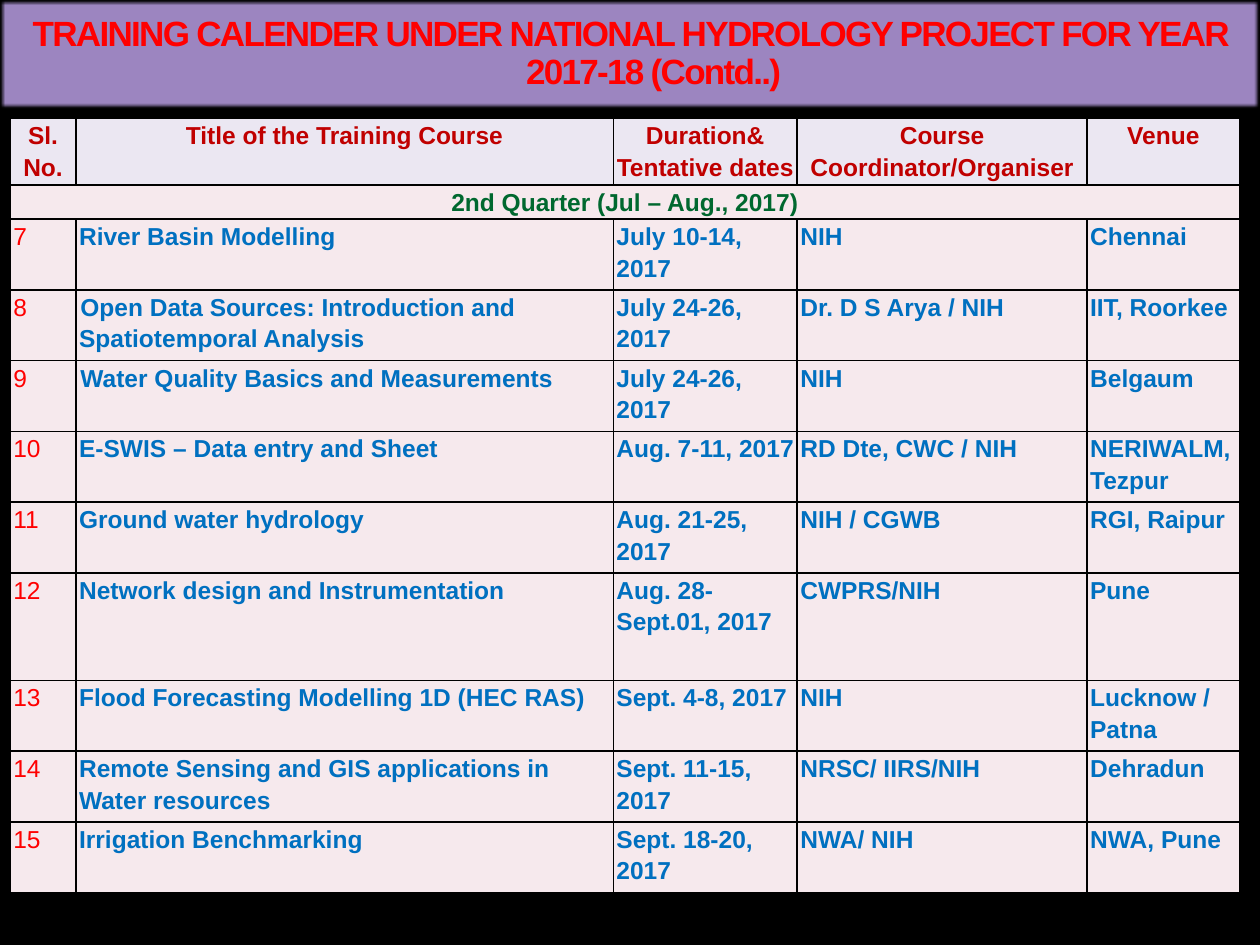
"""Build the training calendar slide for the second quarter of 2017."""
from dataclasses import dataclass

import lxml.etree
import pptx
import pptx.dml.color
import pptx.enum.shapes
import pptx.enum.text
import pptx.oxml
import pptx.oxml.ns
import pptx.util

Pt = pptx.util.Pt
ALIGN = pptx.enum.text.PP_ALIGN
ANCHOR = pptx.enum.text.MSO_ANCHOR


@dataclass(frozen=True)
class Theme:
    """Colours, font and type sizes of the slide."""
    font: str = "Arial"
    title_size: float = 20
    table_size: float = 14
    background: str = "000000"
    banner: str = "9C85C0"
    header_fill: str = "EBE7F2"
    body_fill: str = "F6E9ED"
    border: str = "000000"
    title: str = "FF0000"
    header: str = "C00000"
    quarter: str = "00682F"
    number: str = "FF0000"
    course: str = "0070C0"


THEME = Theme()
TITLE = "TRAINING CALENDER UNDER NATIONAL HYDROLOGY PROJECT FOR YEAR 2017-18 (Contd..)"
HEADINGS = ["Sl. No.", "Title of the Training Course", "Duration& Tentative dates",
            "Course Coordinator/Organiser", "Venue"]
QUARTER = "2nd Quarter (Jul – Aug., 2017)"
COURSES = [
    ("7", "River Basin Modelling", "July 10-14, 2017", "NIH", "Chennai"),
    ("8", "Open Data Sources: Introduction and Spatiotemporal Analysis",
     "July 24-26, 2017", "Dr. D S Arya / NIH", "IIT, Roorkee"),
    ("9", "Water Quality Basics and Measurements", "July 24-26, 2017", "NIH", "Belgaum"),
    ("10", "E-SWIS – Data entry and Sheet", "Aug. 7-11, 2017", "RD Dte, CWC / NIH",
     "NERIWALM, Tezpur"),
    ("11", "Ground water hydrology", "Aug. 21-25, 2017", "NIH / CGWB", "RGI, Raipur"),
    ("12", "Network design and Instrumentation", "Aug. 28-Sept.01, 2017", "CWPRS/NIH", "Pune"),
    ("13", "Flood Forecasting Modelling 1D (HEC RAS)", "Sept. 4-8, 2017", "NIH",
     "Lucknow / Patna"),
    ("14", "Remote Sensing and GIS applications in Water resources",
     "Sept. 11-15, 2017", "NRSC/ IIRS/NIH", "Dehradun"),
    ("15", "Irrigation Benchmarking", "Sept. 18-20, 2017", "NWA/ NIH", "NWA, Pune"),
]
COLUMN_WIDTHS = [37.6, 307.1, 105.1, 165.6, 87.3]
HEADER_HEIGHT, QUARTER_HEIGHT, COURSE_HEIGHT, TALL_HEIGHT = 38.2, 19.5, 40.45, 61.4
TALL_COURSE = "12"
INDENTED_COURSES = ("8", "9")


def rgb(value):
    """Turn a hex string into a colour."""
    return pptx.dml.color.RGBColor.from_string(value)


def write(frame, text, *, color, size, bold=True, align=ALIGN.LEFT, line_spacing=1.15,
          margin=0, indent=0, tracking=0):
    """Write one formatted paragraph into a text frame."""
    paragraph = frame.paragraphs[0]
    paragraph.alignment = align
    paragraph.line_spacing = line_spacing
    if margin or indent:
        properties = paragraph._p.get_or_add_pPr()
        properties.set("marL", str(Pt(margin)))
        properties.set("indent", str(Pt(indent)))
    run = paragraph.add_run()
    run.text = text
    run.font.name = THEME.font
    run.font.size = Pt(size)
    run.font.bold = bold
    run.font.color.rgb = rgb(color)
    if tracking:
        run._r.get_or_add_rPr().set("spc", str(round(tracking * 100)))


def add_borders(cell, width=1):
    """Draw a solid line on all four sides of a cell."""
    properties = cell._tc.get_or_add_tcPr()
    for position, side in enumerate(("lnL", "lnR", "lnT", "lnB")):
        line = pptx.oxml.parse_xml(
            f'<a:{side} {pptx.oxml.ns.nsdecls("a")} w="{Pt(width)}">'
            f'<a:solidFill><a:srgbClr val="{THEME.border}"/></a:solidFill></a:{side}>')
        properties.insert(position, line)


def fill_cell(cell, text, fill, **text_format):
    """Set the fill, borders, insets and text of a cell."""
    cell.fill.solid()
    cell.fill.fore_color.rgb = rgb(fill)
    add_borders(cell)
    cell.margin_left = cell.margin_right = Pt(1.8)
    cell.margin_top = cell.margin_bottom = 0
    cell.vertical_anchor = ANCHOR.TOP
    if text:
        write(cell.text_frame, text, size=THEME.table_size, **text_format)


def add_calendar(slide, left, top, width):
    """Place the course table in a box of the given width."""
    heights = [HEADER_HEIGHT, QUARTER_HEIGHT]
    heights += [TALL_HEIGHT if course[0] == TALL_COURSE else COURSE_HEIGHT for course in COURSES]
    calendar = slide.shapes.add_table(
        len(heights), len(HEADINGS), Pt(left), Pt(top), Pt(width), Pt(sum(heights))).table
    calendar.first_row = calendar.horz_banding = False
    scale = width / sum(COLUMN_WIDTHS)
    for column, column_width in zip(calendar.columns, COLUMN_WIDTHS):
        column.width = Pt(column_width * scale)
    for row, height in zip(calendar.rows, heights):
        row.height = Pt(height)

    for index, heading in enumerate(HEADINGS):
        fill_cell(calendar.cell(0, index), heading, THEME.header_fill,
                  color=THEME.header, align=ALIGN.CENTER)
        fill_cell(calendar.cell(1, index), "" if index else QUARTER, THEME.body_fill,
                  color=THEME.quarter, align=ALIGN.CENTER)
    calendar.cell(1, 0).merge(calendar.cell(1, len(HEADINGS) - 1))

    for row_index, course in enumerate(COURSES, start=2):
        for index, entry in enumerate(course):
            indented = index == 1 and course[0] in INDENTED_COURSES
            fill_cell(calendar.cell(row_index, index), entry, THEME.body_fill,
                      color=THEME.course if index else THEME.number,
                      bold=index > 0, indent=0.75 if indented else 0)


def add_banner(slide, left, top, width, height):
    """Place the title banner with its soft edge in the given box."""
    banner = slide.shapes.add_shape(
        pptx.enum.shapes.MSO_SHAPE.RECTANGLE, Pt(left), Pt(top), Pt(width), Pt(height))
    banner.fill.solid()
    banner.fill.fore_color.rgb = rgb(THEME.banner)
    banner.line.fill.background()
    banner.shadow.inherit = False
    effects = banner._element.spPr.find(pptx.oxml.ns.qn("a:effectLst"))
    lxml.etree.SubElement(effects, pptx.oxml.ns.qn("a:softEdge"), rad=str(Pt(2)))
    frame = banner.text_frame
    frame.word_wrap = True
    frame.vertical_anchor = ANCHOR.MIDDLE
    write(frame, TITLE, color=THEME.title, size=THEME.title_size, align=ALIGN.CENTER,
          line_spacing=0.9, margin=27, indent=-27, tracking=-1)


def main():
    """Build the slide and save it."""
    deck = pptx.Presentation()
    deck.slide_width, deck.slide_height = Pt(720), Pt(540)
    slide = deck.slides.add_slide(deck.slide_layouts[6])
    slide.background.fill.solid()
    slide.background.fill.fore_color.rgb = rgb(THEME.background)
    add_calendar(slide, 5.8, 67.6, 702.7)
    add_banner(slide, 0, 0, 720, 62)
    deck.save("out.pptx")


if __name__ == "__main__":
    main()
